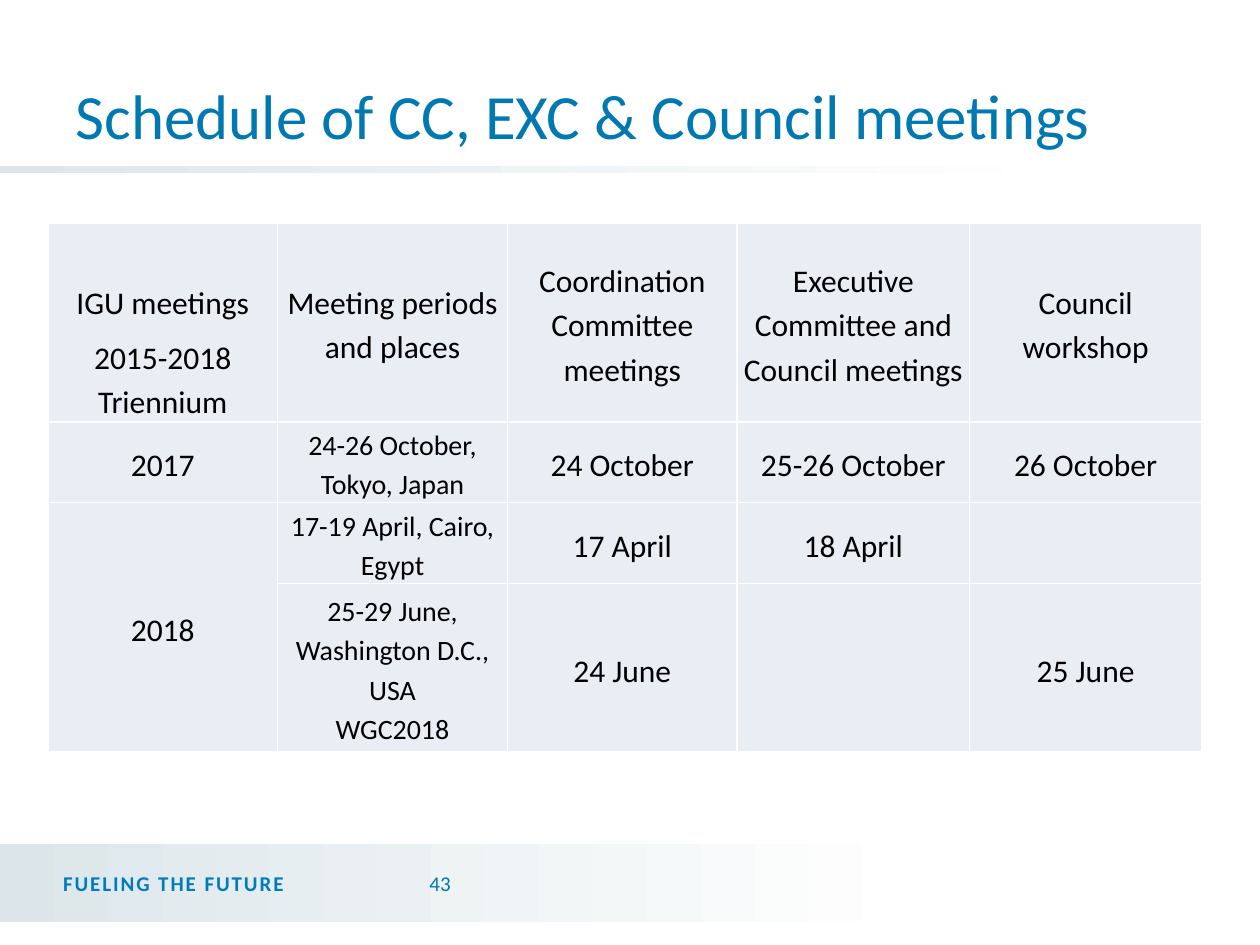
from lxml import etree
from pptx import Presentation
from pptx.dml.color import RGBColor
from pptx.enum.shapes import MSO_SHAPE
from pptx.enum.text import MSO_ANCHOR, MSO_AUTO_SIZE, PP_ALIGN
from pptx.oxml.ns import qn
from pptx.util import Inches, Pt

RECTANGLE = MSO_SHAPE.RECTANGLE
MIDDLE, BOTTOM = MSO_ANCHOR.MIDDLE, MSO_ANCHOR.BOTTOM
LEFT, CENTER = PP_ALIGN.LEFT, PP_ALIGN.CENTER
NO_AUTOFIT = MSO_AUTO_SIZE.NONE

WIDTH, HEIGHT = 10, 7.5
FONT = "Calibri"
BLUE, BRIGHT_BLUE, BLACK = "0079B3", "007BBC", "000000"
MIST, WHITE, CELL_FILL = "DCE6EA", "FFFFFF", "E9EDF4"

COLUMN_SHARES = [1.82, 1.82, 1.82, 1.84, 1.84]
ROW_SHARES = [1.58, 0.64, 0.64, 1.34]
PLACE_COLUMN = 1
HEADING_DROP = 0.44
MEETINGS = [
    ["IGU meetings\n2015-2018 Triennium", "Meeting periods and places",
     "Coordination Committee meetings",
     "Executive Committee and Council meetings", "Council workshop"],
    ["2017", "24-26 October, Tokyo, Japan", "24 October", "25-26 October",
     "26 October"],
    ["2018", "17-19 April, Cairo, Egypt", "17 April", "18 April", ""],
    ["", "25-29 June, Washington D.C., USA\vWGC2018", "24 June", "",
     "25 June"],
]


def color(hex_value):
    """Return the colour for a hex string."""
    return RGBColor.from_string(hex_value)


def assign(target, values):
    """Set each attribute of the target from a dict."""
    for attribute, value in values.items():
        setattr(target, attribute, value)


def inches(box):
    """Convert a box of numbers to lengths."""
    return [Inches(length) for length in box]


def style_text(frame, size, hex_value, bold=False, **paragraph_format):
    """Format every paragraph of a text frame."""
    for paragraph in frame.paragraphs:
        assign(paragraph, paragraph_format)
        assign(paragraph.font, {"name": FONT, "size": Pt(size), "bold": bold})
        paragraph.font.color.rgb = color(hex_value)


def add_fading_band(slide, box, fade_end):
    """Draw a band that fades to white from left to right."""
    band = slide.shapes.add_shape(RECTANGLE, *inches(box))
    band.shadow.inherit = False
    band.line.fill.background()
    band.fill.gradient()
    band.fill.gradient_angle = 0
    for stop, position, tone in zip(band.fill.gradient_stops, (0, fade_end),
                                    (MIST, WHITE)):
        stop.position = position
        stop.color.rgb = color(tone)


def add_label(slide, box, text, hex_value, left_inset=0.1, bold=False):
    """Add one footer label and return its text frame."""
    frame = slide.shapes.add_textbox(*inches(box)).text_frame
    assign(frame, {"word_wrap": True, "vertical_anchor": MIDDLE,
                   "margin_left": Inches(left_inset), "text": text})
    style_text(frame, 12, hex_value, bold)
    return frame


def add_footer(slide, box):
    """Place the footer band, its motto and the page number."""
    left, top, width, height = box
    add_fading_band(slide, box, 0.98)
    label_top, label_height = top + 0.11, 0.4
    motto_left, motto_width = left + 0.5, 2.81
    motto = add_label(slide, (motto_left, label_top, motto_width, label_height),
                      "FUELING THE FUTURE", BRIGHT_BLUE, 0, True)
    motto.paragraphs[0].runs[0].font._element.set("spc", "110")
    add_label(slide, (motto_left + motto_width, label_top, 0.8, label_height),
              "43", BLUE)


def add_title(slide, box):
    """Place the title above its fading rule."""
    left, top, width, height = box
    add_fading_band(slide, (0, top + height + 0.06, WIDTH * 0.95, 0.05), 0.89)
    title = slide.shapes.title
    assign(title, dict(zip(("left", "top", "width", "height"), inches(box))))
    frame = title.text_frame
    assign(frame, {"text": "Schedule of CC, EXC & Council meetings",
                   "vertical_anchor": BOTTOM, "word_wrap": True,
                   "auto_size": NO_AUTOFIT})
    style_text(frame, 36, BLUE, alignment=LEFT)


def add_borders(cell):
    """Give a cell thin white borders on all sides."""
    properties = cell._tc.get_or_add_tcPr()
    for index, side in enumerate(("lnL", "lnR", "lnT", "lnB")):
        line = etree.Element(qn(f"a:{side}"), w=str(Pt(1)))
        fill = etree.SubElement(line, qn("a:solidFill"))
        etree.SubElement(fill, qn("a:srgbClr"), val=WHITE)
        properties.insert(index, line)


def format_cell(cell, text, size, side_inset, top_inset):
    """Fill a cell and set its text."""
    cell.fill.solid()
    cell.fill.fore_color.rgb = color(CELL_FILL)
    add_borders(cell)
    assign(cell, {"text": text, "vertical_anchor": MIDDLE,
                  "margin_left": Inches(side_inset),
                  "margin_right": Inches(side_inset),
                  "margin_top": Inches(top_inset), "margin_bottom": 0})
    style_text(cell.text_frame, size, BLACK, alignment=CENTER,
               line_spacing=1.15, space_after=Pt(6))


def add_schedule(slide, box):
    """Place the meeting schedule, its columns and rows sharing the box."""
    left, top, width, height = box
    table = slide.shapes.add_table(len(ROW_SHARES), len(COLUMN_SHARES),
                                   *inches(box)).table
    assign(table, {"first_row": False, "horz_banding": False})
    for column, share in zip(table.columns, COLUMN_SHARES):
        column.width = Inches(width * share / sum(COLUMN_SHARES))
    for row, share in zip(table.rows, ROW_SHARES):
        row.height = Inches(height * share / sum(ROW_SHARES))
    for row_index, meeting in enumerate(MEETINGS):
        for column_index, text in enumerate(meeting):
            is_place = row_index > 0 and column_index == PLACE_COLUMN
            is_year = row_index > 0 and column_index == 0
            is_heading = row_index == column_index == 0
            format_cell(table.cell(row_index, column_index), text,
                        16 if is_place else 18, 0 if is_year else 0.05,
                        HEADING_DROP if is_heading else 0.01)
    table.cell(2, 0).merge(table.cell(3, 0))


def main():
    """Build the schedule slide and save it."""
    deck = Presentation()
    assign(deck, {"slide_width": Inches(WIDTH), "slide_height": Inches(HEIGHT)})
    slide = deck.slides.add_slide(deck.slide_layouts[5])
    add_footer(slide, (0, 6.7, 7.42, 0.62))
    add_title(slide, (WIDTH * 0.05, 0.01, WIDTH * 0.9, HEIGHT / 6))
    add_schedule(slide, (0.38, 1.77, 9.16, 4.2))
    deck.save("out.pptx")


if __name__ == "__main__":
    main()
